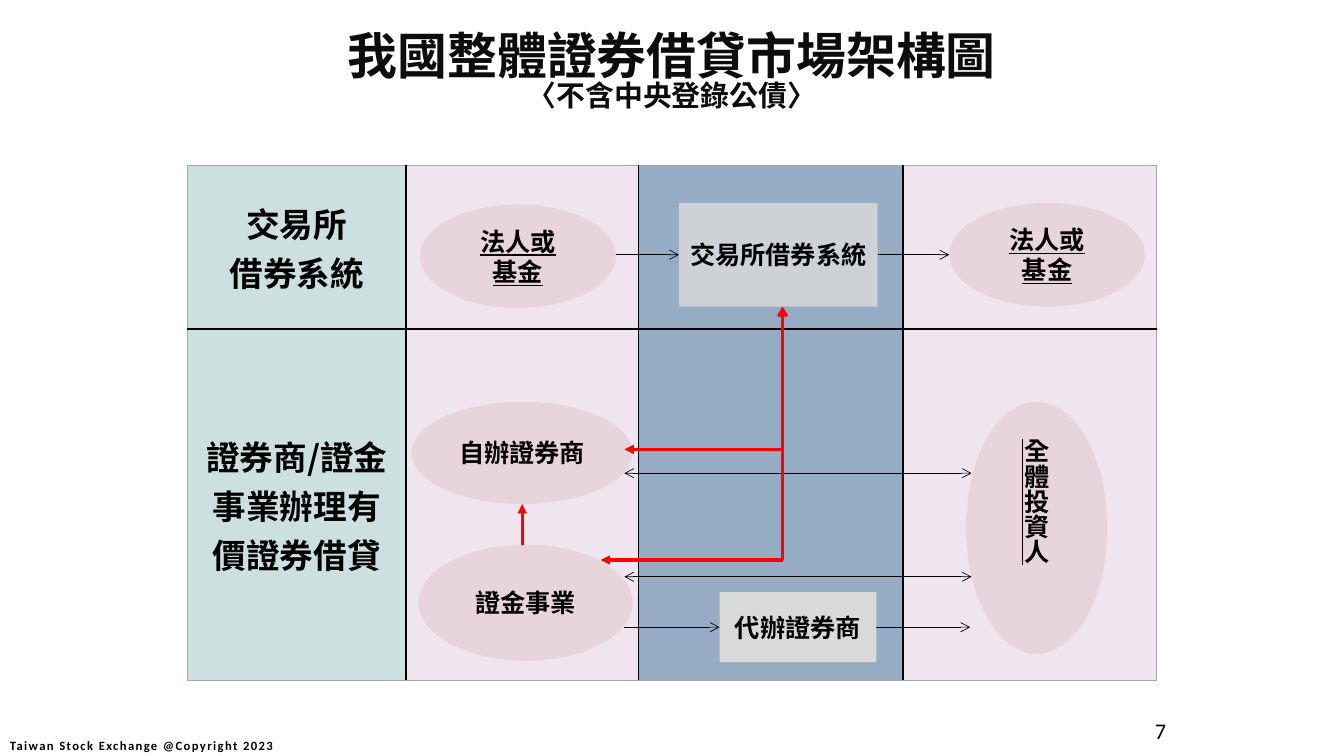
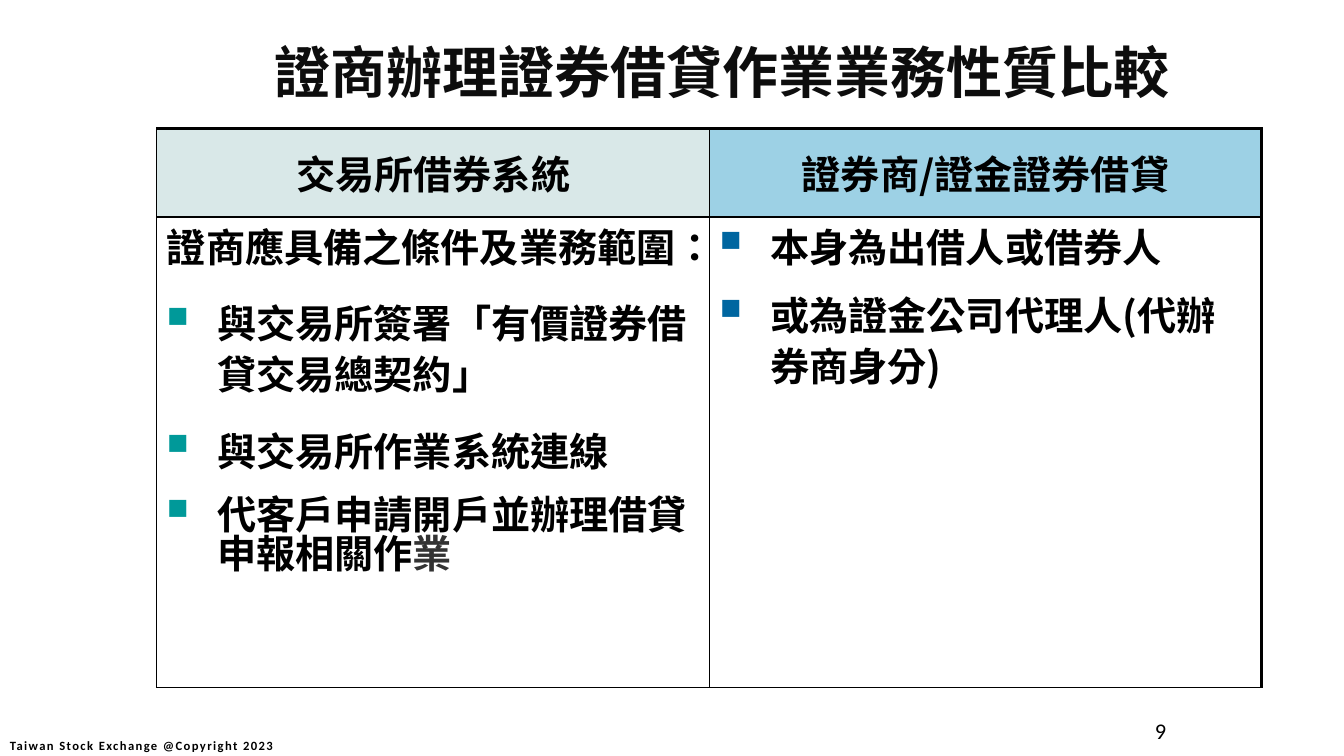
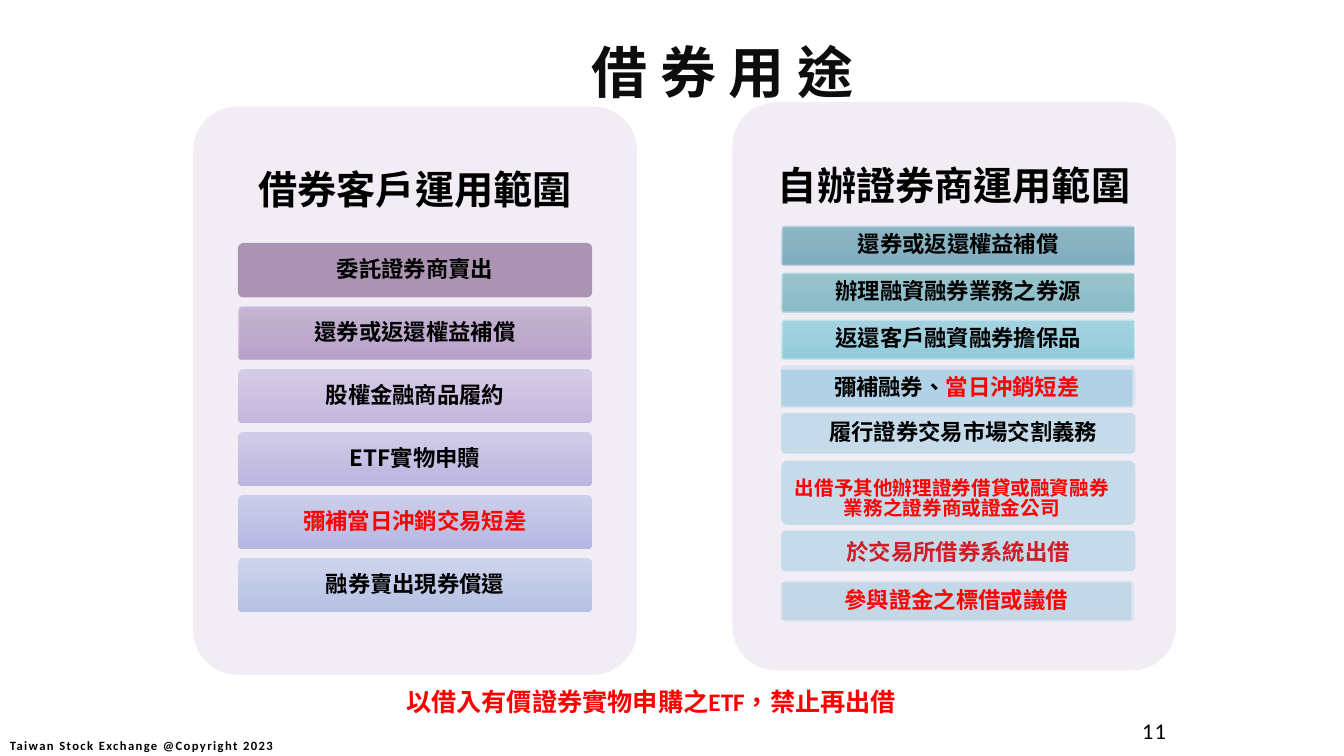
from lxml import etree
from pptx import Presentation
from pptx import util as u
from pptx.dml.color import RGBColor
from pptx.enum import shapes, text
from pptx.oxml.ns import qn

Pt = u.Pt
LATIN, CHINESE = "Calibri", "Noto Sans CJK SC"
COLORS = {
    "black": "000000", "title": "0D0D0D", "gray text": "333333", "red": "FF0000",
    "edge": "A6A6A6", "teal": "006666", "pink": "E3CCDE", "slate": "96ACC5",
    "node": "E8D4DB", "box": "D9D9D9", "sky": "0A8DC0", "green bullet": "009999",
    "blue": "0066A0", "panel": "E7DCEA", "plum": "663D70", "violet": "493766",
    "azure": "1594C6", "cyan": "189BCC",
    "mauve top": "DACBE4", "mauve end": "CBB5DB", "lilac top": "D6CCE6", "lilac end": "C4B6DD",
    "iris top": "D0CCE8", "iris end": "BCB5E0", "indigo top": "CCCDEA", "indigo end": "B6B7E2",
    "cobalt top": "CDD4EC", "cobalt end": "B6C1E4", "steel top": "CDDBED", "steel end": "B6CCE7",
    "ice top": "CEE4EF", "ice end": "B7D8E9", "aqua top": "CFEDF1", "aqua end": "B7E5EB",
}
RECT = shapes.MSO_SHAPE.RECTANGLE
ROUND = shapes.MSO_SHAPE.ROUNDED_RECTANGLE
OVAL = shapes.MSO_SHAPE.OVAL
CENTER, LEFT, RIGHT = text.PP_ALIGN.CENTER, text.PP_ALIGN.LEFT, text.PP_ALIGN.RIGHT
TOP, MIDDLE = text.MSO_ANCHOR.TOP, text.MSO_ANCHOR.MIDDLE


def paint(item, color, opacity=100):
    """Fill a shape or cell; a "name top/name end" pair gives a vertical gradient."""
    fill = item.fill
    if isinstance(color, tuple):
        fill.gradient()
        fill.gradient_angle = 270
        for stop, name in zip(fill.gradient_stops, color):
            stop.color.rgb = RGBColor.from_string(COLORS[name])
    else:
        fill.solid()
        fill.fore_color.rgb = RGBColor.from_string(COLORS[color])
        if opacity < 100:
            properties = item._tc.tcPr if hasattr(item, "_tc") else item._element.spPr
            tone = properties.find(qn("a:solidFill")).find(qn("a:srgbClr"))
            etree.SubElement(tone, qn("a:alpha")).set("val", str(opacity * 1000))
    if hasattr(item, "shadow"):
        item.shadow.inherit = False
        item.line.fill.background()


def write(frame, lines, size, color="black", font=CHINESE, bold=True, align=CENTER, anchor=MIDDLE,
          inset=0, spacing=None, underline=None, tracking=0, bullet=None, first_bullet=0):
    """Write one paragraph per line; a line is a string or a list of (text, colour) runs."""
    frame.word_wrap = True
    frame.vertical_anchor = anchor
    frame.margin_left = frame.margin_right = frame.margin_top = frame.margin_bottom = Pt(inset)
    for index, line in enumerate(lines):
        paragraph = frame.add_paragraph() if index else frame.paragraphs[0]
        if bullet and index >= first_bullet:
            properties = paragraph._p.get_or_add_pPr()
            properties.set("marL", str(Pt(36)))
            properties.set("indent", str(-Pt(36)))
            bullet_color = etree.SubElement(properties, qn("a:buClr"))
            etree.SubElement(bullet_color, qn("a:srgbClr")).set("val", COLORS[bullet])
            etree.SubElement(properties, qn("a:buSzPct")).set("val", "75000")
            etree.SubElement(properties, qn("a:buChar")).set("char", "■")
        paragraph.alignment = align
        paragraph.line_spacing = spacing
        paragraph.font.size = Pt(size)
        paragraph.font.name = font
        paragraph.font.bold = bold
        paragraph.font.underline = underline
        paragraph.font.color.rgb = RGBColor.from_string(COLORS[color])
        defaults = paragraph._p.pPr.find(qn("a:defRPr"))
        defaults.set("lang", "zh-TW")
        if tracking:
            defaults.set("spc", str(tracking * 100))
        etree.SubElement(defaults, qn("a:ea")).set("typeface", CHINESE)
        for words, tint in [(line, None)] if isinstance(line, str) else line:
            run = paragraph.add_run()
            run.text = words
            if tint:
                run.font.color.rgb = RGBColor.from_string(COLORS[tint])


presentation = Presentation()
presentation.slide_width, presentation.slide_height = Pt(960), Pt(540)

# Shared footer, page number and title
slides = []
for number, title, size, left, top, spacing in [
    ("7", "我國整體證券借貸市場架構圖", 35.6, 84, 18, 0.8),
    ("9", "證商辦理證券借貸作業業務性質比較", 40, 120, 14, 1.2),
    ("11", "借 券 用 途", 40, 120, 14, 1.2),
]:
    slide = presentation.slides.add_slide(presentation.slide_layouts[6])
    slides.append(slide)
    footer = slide.shapes.add_textbox(Pt(0), Pt(525), Pt(202), Pt(15))
    write(footer.text_frame, ["Taiwan Stock Exchange @Copyright 2023"], 9, font=LATIN, tracking=1)
    page = slide.shapes.add_textbox(Pt(690), Pt(504), Pt(150), Pt(36))
    write(page.text_frame, [number], 16, font=LATIN, bold=False, align=RIGHT, inset=7.2, tracking=1)
    heading = slide.shapes.add_textbox(Pt(left), Pt(top), Pt(792), Pt(79))
    write(heading.text_frame, [title], size, "title", anchor=TOP, inset=3.6, spacing=spacing)
    if number == "7":
        heading.text_frame.margin_top = Pt(8)
        paragraph = heading.text_frame.paragraphs[0]
        paragraph.add_line_break()
        subtitle = paragraph.add_run()
        subtitle.text = "〈不含中央登錄公債〉"
        subtitle.font.size = Pt(20.6)

# Tables
market_slide, comparison_slide, usage_slide = slides
tables = []
for slide, left, top, columns, rows in [
    (market_slide, 134, 118, (156, 166, 189, 181), (117, 251)),
    (comparison_slide, 112, 92, (395, 394), (63, 336)),
]:
    frame = slide.shapes.add_table(len(rows), len(columns), Pt(left), Pt(top),
                                   Pt(sum(columns)), Pt(sum(rows)))
    table = frame.table
    table.first_row = table.horz_banding = False
    for column, width in zip(table.columns, columns):
        column.width = Pt(width)
    for row, height in zip(table.rows, rows):
        row.height = Pt(height)
    tables.append(table)
market, comparison = tables

for row, lines in enumerate([["交易所", "借券系統"], ["證券商/證金事業辦理有價證券借貸"]]):
    for column, (color, opacity) in enumerate(
            [("teal", 20), ("pink", 50), ("slate", 100), ("pink", 50)]):
        paint(market.cell(row, column), color, opacity)
    label = market.cell(row, 0)
    label.vertical_anchor = MIDDLE
    label.margin_left = label.margin_right = Pt(9)
    write(label.text_frame, lines, 24)

for column, (label, color, opacity, bullet, first_bullet, lines, spacings) in enumerate([
    ("交易所借券系統", "teal", 15, "green bullet", 1,
     ["證商應具備之條件及業務範圍：", "與交易所簽署「有價證券借貸交易總契約」", "與交易所作業系統連線",
      [("代客戶申請開戶並辦理借貸申報相關作", None), ("業", "gray text")]],
     [(0, 0.9), (18, 0.9), (18, 0.9), (18, Pt(28))]),
    ("證券商/證金證券借貸", "sky", 40, "blue", 0,
     ["本身為出借人或借券人", "或為證金公司代理人(代辦券商身分)"],
     [(0, 0.9), (12, 0.9)]),
]):
    header, body = comparison.cell(0, column), comparison.cell(1, column)
    paint(header, color, opacity)
    header.vertical_anchor = MIDDLE
    write(header.text_frame, [label], 28)
    body.fill.background()
    write(body.text_frame, lines, 28, align=LEFT, anchor=TOP, bullet=bullet, first_bullet=first_bullet)
    for paragraph, (before, spacing) in zip(body.text_frame.paragraphs, spacings):
        paragraph.space_before = Pt(before)
        paragraph.line_spacing = spacing

# Cell borders: outer edges left, right, top, bottom, then the inner lines
for table, outer in [
    (market, [("edge", 0.5)] * 4),
    (comparison, [("black", 1), ("black", 2.25), ("black", 2.25), ("black", 1)]),
]:
    last_row, last_column = len(table.rows) - 1, len(table.columns) - 1
    for row in range(last_row + 1):
        for column in range(last_column + 1):
            properties = table.cell(row, column)._tc.get_or_add_tcPr()
            on_edge = [column == 0, column == last_column, row == 0, row == last_row]
            for index, side in enumerate("LRTB"):
                color, width = outer[index] if on_edge[index] else ("black", 1)
                border = etree.Element(qn(f"a:ln{side}"), w=str(Pt(width)))
                solid = etree.SubElement(border, qn("a:solidFill"))
                etree.SubElement(solid, qn("a:srgbClr")).set("val", COLORS[color])
                properties.insert(index, border)

# Market diagram
nodes = {}
for name, kind, box, color, opacity, lines, underline in [
    ("system", RECT, (485, 145, 142, 74), "box", 84, ["交易所借券系統"], None),
    ("borrower", OVAL, (678, 145, 140, 74), "node", 100, ["法人或", "基金"], True),
    ("lender", OVAL, (300, 146, 140, 74), "node", 100, ["法人或", "基金"], True),
    ("broker", OVAL, (294, 287, 158, 73), "node", 100, ["自辦證券商"], None),
    ("finance", OVAL, (299, 389, 153, 83), "node", 100, ["證金事業"], None),
    ("investors", OVAL, (690, 287, 101, 180), "node", 100, ["全體投資人"], True),
    ("agent", RECT, (514, 423, 112, 50), "box", 100, ["代辦證券商"], None),
]:
    shape = market_slide.shapes.add_shape(kind, *map(Pt, box))
    paint(shape, color, opacity)
    font = CHINESE if name in ("system", "borrower", "lender") else LATIN
    write(shape.text_frame, lines, 18, font=font, underline=underline)
    nodes[name] = shape
nodes["investors"].text_frame._txBody.bodyPr.set("vert", "eaVert")

for ends, color, width, head, tail, begin, end in [
    ((627, 182, 678, 182), "black", 0.5, None, "arrow", "system", None),
    ((440, 182, 485, 182), "black", 0.5, None, "arrow", None, "system"),
    ((626, 448, 693, 448), "black", 0.5, None, "arrow", "agent", None),
    ((446, 448, 514, 448), "black", 0.5, None, "arrow", None, "agent"),
    ((446, 338, 694, 338), "black", 0.5, "arrow", "arrow", None, None),
    ((446, 412, 694, 412), "black", 0.5, "arrow", "arrow", None, None),
    ((559, 219, 559, 400), "red", 2.25, "arrow", None, None, None),
    ((559, 400, 429, 400), "red", 2.25, None, "triangle", None, None),
    ((559, 321, 446, 321), "red", 2.25, None, "triangle", None, None),
    ((373, 389, 373, 360), "red", 2.25, None, "triangle", None, None),
]:
    arrow = market_slide.shapes.add_connector(shapes.MSO_CONNECTOR.STRAIGHT, *map(Pt, ends))
    if begin:
        arrow.begin_connect(nodes[begin], 3)
    if end:
        arrow.end_connect(nodes[end], 1)
    arrow.line.width = Pt(width)
    arrow.line.color.rgb = RGBColor.from_string(COLORS[color])
    line = arrow.line._get_or_add_ln()
    for tag, tip in [("a:headEnd", head), ("a:tailEnd", tail)]:
        if tip:
            etree.SubElement(line, qn(tag)).set("type", tip)
    etree.SubElement(arrow._element.spPr, qn("a:effectLst"))

# Usage panels, as layers from back to front: kind, box, fill, opacity, line, size, text colour
layers = [(ROUND, (558, 261, 253, 29), "azure", 20, None, 16, "black")]
for left, top, label in [(138, 76, "借券客戶運用範圍"), (523, 73, "自辦證券商運用範圍")]:
    layers += [(ROUND, (left, top, 317, 406), "panel", 50, None, 28, "black"),
               (None, (left, top, 317, 122), None, 100, label, 28, "black")]

for index, (fill, opacity, line, color) in enumerate([
    ("plum", 50, "委託證券商賣出", "black"),
    (("mauve top", "mauve end"), 100, None, "black"),
    (("lilac top", "lilac end"), 100, "股權金融商品履約", "black"),
    (("iris top", "iris end"), 100, "ETF實物申贖", "black"),
    (("indigo top", "indigo end"), 100, "彌補當日沖銷交易短差", "red"),
    (("cobalt top", "cobalt end"), 100, "融券賣出現券償還", "black"),
]):
    layers.append((ROUND, (170, 173.5 + 45 * index, 253, 39), fill, opacity, line, 16, color))
    if line is None:
        layers.append((RECT, (171, 219.5, 251, 37), "violet", 15, "還券或返還權益補償", 16, "black"))

for index, (fill, cover, opacity, line) in enumerate([
    (("steel top", "steel end"), "teal", 30, "還券或返還權益補償"),
    (("ice top", "ice end"), "teal", 25, "辦理融資融券業務之券源"),
    (("aqua top", "aqua end"), "blue", 20, "返還客戶融資融券擔保品"),
]):
    top = 161 + 33.5 * index
    layers += [(ROUND, (558, top, 253, 29), fill, 100, None, 16, "black"),
               (RECT, (559, top + 1, 251, 27), cover, opacity, line, 16, "black")]

layers += [
    (RECT, (558, 264, 251, 27), "cyan", 21, [("彌補融券、", None), ("當日沖銷短差", "red")], 16, "black"),
    (ROUND, (558, 295, 253, 29), "azure", 20, None, 16, "black"),
    (None, (575, 296, 226, 27), None, 100, "履行證券交易市場交割義務", 16, "black"),
    (ROUND, (558, 329, 253, 46), "azure", 20, None, 14, "red"),
    (None, (559, 329, 242, 55), None, 100, "出借予其他辦理證券借貸或融資融券業務之證券商或證金公司", 14, "red"),
    (None, (559, 382, 251, 27), None, 100, "於交易所借券系統出借", 16, "red"),
    (ROUND, (558, 379, 253, 29), "azure", 20, None, 16, "red"),
    (ROUND, (559, 415, 251, 29), "cyan", 10, None, 16, "red"),
    (RECT, (558, 416, 250, 27), "blue", 10, "參與證金之標借或議借", 16, "red"),
]
for kind, box, fill, opacity, line, size, color in layers:
    if kind is None:
        shape = usage_slide.shapes.add_textbox(*map(Pt, box))
    else:
        shape = usage_slide.shapes.add_shape(kind, *map(Pt, box))
        paint(shape, fill, opacity)
    if kind == ROUND:
        shape.adjustments[0] = 0.1
    if line:
        write(shape.text_frame, [line], size, color, inset=2.5, spacing=1 if size == 14 else 0.9)
        if size == 14:
            shape.text_frame.paragraphs[0].line_spacing = 0.85

note = usage_slide.shapes.add_textbox(Pt(283), Pt(490), Pt(368), Pt(29))
write(note.text_frame, ["以借入有價證券實物申購之ETF，禁止再出借"], 18, "red", font=LATIN,
      align=LEFT, anchor=TOP, inset=3.6, spacing=0.83)
note.text_frame.margin_left = note.text_frame.margin_right = Pt(7.2)

presentation.save("out.pptx")
